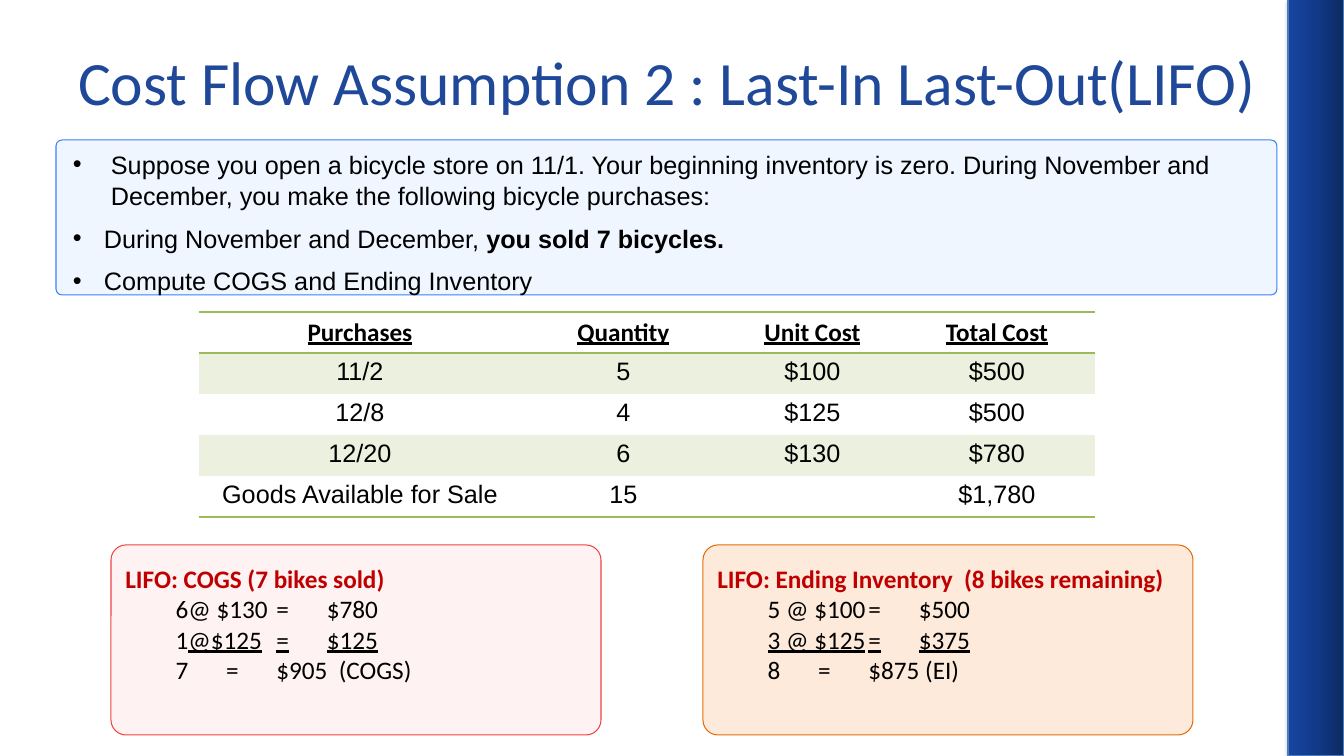
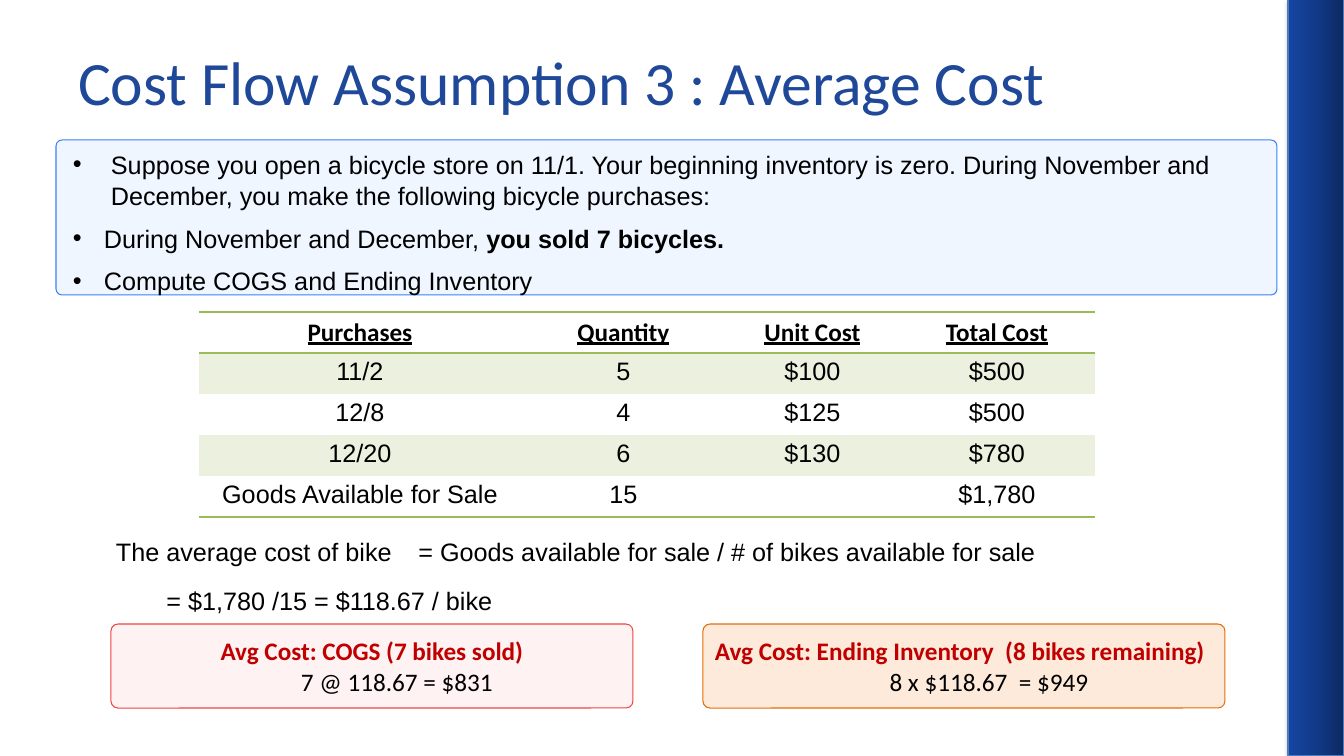
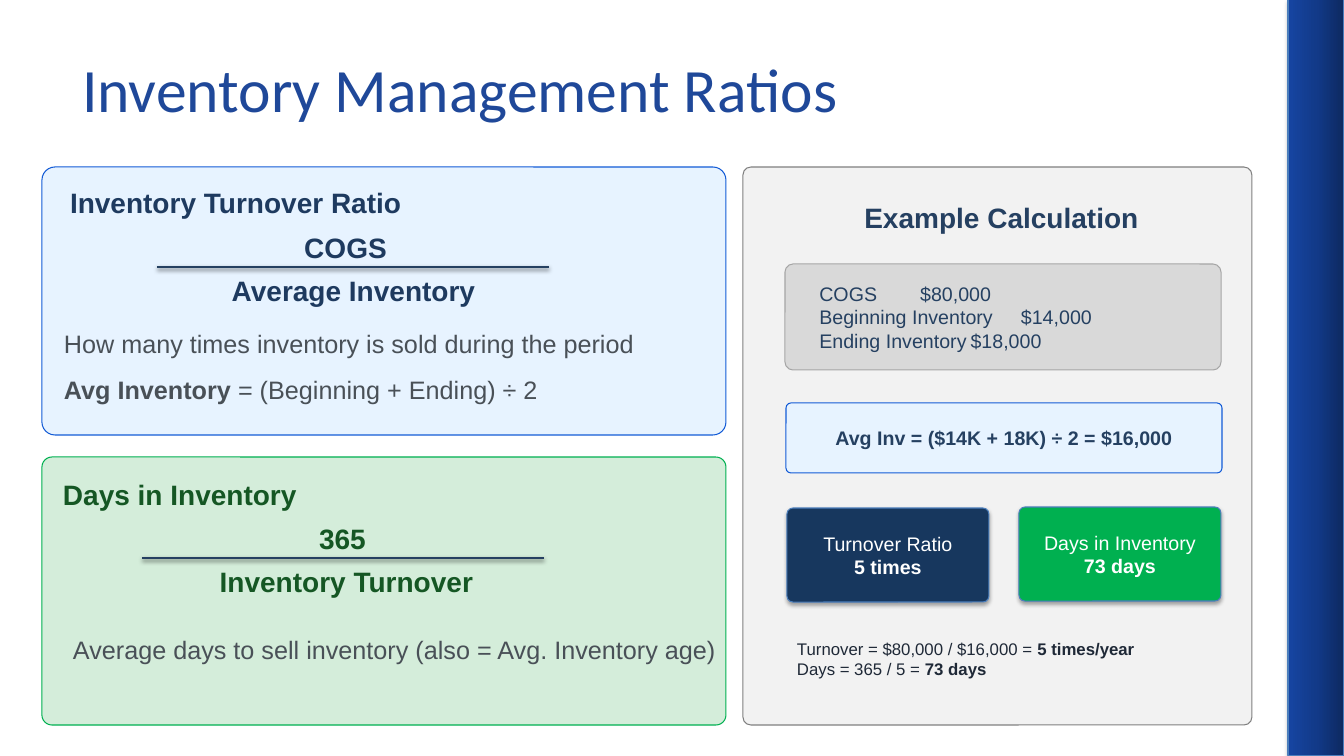
from lxml import etree
from pptx import Presentation
from pptx.dml.color import RGBColor
from pptx.enum.shapes import MSO_CONNECTOR, MSO_SHAPE
from pptx.enum.text import MSO_ANCHOR, MSO_AUTO_SIZE, PP_ALIGN
from pptx.oxml import parse_xml
from pptx.oxml.ns import nsdecls, qn
from pptx.util import Pt

ROUNDED = MSO_SHAPE.ROUNDED_RECTANGLE
RECTANGLE = MSO_SHAPE.RECTANGLE
STRAIGHT = MSO_CONNECTOR.STRAIGHT
LEFT, CENTER = PP_ALIGN.LEFT, PP_ALIGN.CENTER
TOP, MIDDLE = MSO_ANCHOR.TOP, MSO_ANCHOR.MIDDLE
FIXED = MSO_AUTO_SIZE.NONE

EMU_PER_PX = 914400 / 100.8
SLIDE_WIDTH, SLIDE_HEIGHT = 1344, 756
TITLE_ONLY = 5
NO_TABLE_STYLE = "{2D5ABB26-0587-4C30-8999-92F81FD0307C}"

BLACK, WHITE, RED = "000000", "FFFFFF", "C00000"
TITLE_BLUE, NAVY, SLATE = "1F4899", "1E3A5F", "254061"
GREEN_TEXT, GRAY_TEXT, NOTE_TEXT = "155724", "495057", "1F2937"
PALE_BLUE, BLUE_EDGE, GREEN = "E7F3FF", "135BD6", "00B050"
TABLE_GREEN, TABLE_BAND, THEME_EDGE = "9BBB59", "EBF1DE", "4B7EBC"
BAND_STOPS = ((0, "0D2960"), (50, "123A89"), (100, "1645A2"))

RESULT_CARDS = ((111, "FEF2F2", "EF4444"), (703, "FDEADA", "E46C0A"))
COLUMN_WIDTHS = (322, 205, 173, 196)
ROW_HEIGHT = 41
PURCHASES = (
    ("Purchases", "Quantity", "Unit Cost", "Total Cost"),
    ("11/2", "5", "$100", "$500"),
    ("12/8", "4", "$125", "$500"),
    ("12/20", "6", "$130", "$780"),
    ("Goods Available for Sale", "15", "", "$1,780"),
)


def px(length):
    """Turn pixels into EMU."""
    return round(length * EMU_PER_PX)


def rgb(colour):
    """Turn a hex string into a colour."""
    return RGBColor.from_string(colour)


def write(frame, text, *, size=18, font="Arial", colour=BLACK, bold=False,
          underline=False, align=LEFT, line=None, before=0, after=0,
          indent=0, bullet=False, tabs=()):
    """Add a paragraph; text is a string or (string, overrides) pairs."""
    first = frame.paragraphs[0]
    paragraph = frame.add_paragraph() if first.runs else first
    paragraph.alignment = align
    paragraph.line_spacing = line
    paragraph.space_before, paragraph.space_after = Pt(before), Pt(after)
    properties = paragraph._p.get_or_add_pPr()
    properties.set("marL", str(px(indent)))
    properties.set("indent", str(-px(indent) if bullet else 0))
    if bullet:
        etree.SubElement(properties, qn("a:buFont"), typeface="Arial")
        etree.SubElement(properties, qn("a:buChar"), char="•")
    if tabs:
        stops = etree.SubElement(properties, qn("a:tabLst"))
        for stop in tabs:
            etree.SubElement(stops, qn("a:tab"), pos=str(px(stop)), algn="l")
    for words, changes in [(text, {})] if isinstance(text, str) else text:
        run = paragraph.add_run()
        run.text = words
        run.font.name, run.font.size = font, Pt(size)
        run.font.color.rgb = rgb(colour)
        run.font.bold = changes.get("bold", bold)
        run.font.underline = changes.get("underline", underline)


def set_shadow(item, opacity=0, distance=1.8):
    """Give a shape or connector a soft shadow, or none."""
    effects = etree.SubElement(item.element.spPr, qn("a:effectLst"))
    if opacity:
        effects.append(parse_xml(
            f'<a:outerShdw {nsdecls("a")} blurRad="{Pt(3.1)}" dist="{Pt(distance)}" '
            f'dir="5400000" rotWithShape="0"><a:srgbClr val="000000">'
            f'<a:alpha val="{opacity * 1000}"/></a:srgbClr></a:outerShdw>'))


def add_card(slide, box, radius, fill, edge, anchor=MIDDLE, shadow=0):
    """Add a rounded card and return its text frame."""
    card = slide.shapes.add_shape(ROUNDED, *map(px, box))
    card.adjustments[0] = radius / min(box[2:])
    card.fill.solid()
    card.fill.fore_color.rgb = rgb(fill)
    card.line.color.rgb = rgb(edge)
    card.line.width = Pt(0.75)
    set_shadow(card, shadow)
    frame = card.text_frame
    frame.word_wrap = True
    frame.vertical_anchor = anchor
    return frame


def add_text(slide, box):
    """Add a wrapping text box without insets and return its frame."""
    frame = slide.shapes.add_textbox(*map(px, box)).text_frame
    frame.word_wrap = True
    frame.margin_left = frame.margin_right = 0
    frame.margin_top = frame.margin_bottom = 0
    return frame


def add_slide(deck, title, left=68, top=18):
    """Add a title-only slide with the shared title style."""
    slide = deck.slides.add_slide(deck.slide_layouts[TITLE_ONLY])
    heading = slide.shapes.title
    heading.left, heading.top = px(left), px(top)
    heading.width, heading.height = px(1210), px(126)
    frame = heading.text_frame
    frame.word_wrap = True
    frame.auto_size = FIXED
    frame.vertical_anchor = MIDDLE
    write(frame, title, size=44, font="Calibri", colour=TITLE_BLUE)
    return slide


def add_master_band(deck, slide):
    """Draw the blue side band and move it to the slide master."""
    band = slide.shapes.add_shape(
        RECTANGLE, px(1288), 0, px(SLIDE_WIDTH - 1288), px(SLIDE_HEIGHT))
    stops = "".join(
        f'<a:gs pos="{place * 1000}"><a:srgbClr val="{colour}"/></a:gs>'
        for place, colour in BAND_STOPS)
    band.element.spPr.insert(2, parse_xml(
        f'<a:gradFill {nsdecls("a")} rotWithShape="1"><a:gsLst>{stops}</a:gsLst>'
        f'<a:lin ang="10800000" scaled="0"/></a:gradFill>'))
    band.line.color.rgb = rgb(THEME_EDGE)
    band.line.width = Pt(0.75)
    set_shadow(band, 35)
    deck.slide_master.shapes.element.insert(2, band.element)


def add_cell_edges(cell, edges):
    """Draw green lines on the named edges of a cell."""
    properties = cell._tc.get_or_add_tcPr()
    for position, edge in enumerate(edges):
        properties.insert(position, parse_xml(
            f'<a:ln{edge} {nsdecls("a")} w="{Pt(1)}"><a:solidFill>'
            f'<a:srgbClr val="{TABLE_GREEN}"/></a:solidFill></a:ln{edge}>'))


def add_purchases_table(slide):
    """Add the table of bicycle purchases."""
    holder = slide.shapes.add_table(
        len(PURCHASES), len(COLUMN_WIDTHS), px(199), px(312),
        px(sum(COLUMN_WIDTHS)), px(ROW_HEIGHT * len(PURCHASES)))
    for style in holder.element.iter(qn("a:tableStyleId")):
        style.text = NO_TABLE_STYLE
    table = holder.table
    table.first_row = table.horz_banding = False
    for column, width in zip(table.columns, COLUMN_WIDTHS):
        column.width = px(width)
    edges = {0: "TB", len(PURCHASES) - 1: "B"}
    for row_index, values in enumerate(PURCHASES):
        table.rows[row_index].height = px(ROW_HEIGHT)
        is_header = row_index == 0
        for column_index, value in enumerate(values):
            cell = table.cell(row_index, column_index)
            if row_index % 2:
                cell.fill.solid()
                cell.fill.fore_color.rgb = rgb(TABLE_BAND)
            else:
                cell.fill.background()
            add_cell_edges(cell, edges.get(row_index, ""))
            if is_header:
                write(cell.text_frame, value, font="Calibri", bold=True,
                      underline=True, align=CENTER)
            elif value:
                cell.margin_left = cell.margin_right = px(7)
                cell.margin_top = cell.margin_bottom = 0
                write(cell.text_frame, value, align=CENTER, line=1.15)


def add_problem_slide(deck, title):
    """Add a slide with the bicycle store problem and its purchases."""
    slide = add_slide(deck, title)
    add_card(slide, (56, 140, 1221, 155), 6, "EFF6FF", "3B82F6")
    problem = add_text(slide, (73, 148, 1195, 143))
    bullets = (
        (38, "Suppose you open a bicycle store on 11/1. Your beginning inventory is zero. "
             "During November and December, you make the following bicycle purchases:"),
        (31, (("During November and December, ", {}),
              ("you sold 7 bicycles.", {"bold": True}))),
        (31, "Compute COGS and Ending Inventory"),
    )
    for indent, text in bullets:
        write(problem, text, line=Pt(22.4), after=8, indent=indent, bullet=True)
    add_purchases_table(slide)
    return slide


def add_lifo_slide(deck):
    """Add the LIFO slide."""
    slide = add_problem_slide(deck, "Cost Flow Assumption 2 : Last-In Last-Out(LIFO)")
    underlined = {"underline": True}
    results = (
        ("LIFO: COGS (7 bikes sold)",
         ("\t6@ $130\t=\t$780",
          (("\t1", {}), ("@$125\t=\t$125", underlined)),
          "\t7\t=\t$905  (COGS)")),
        ("LIFO: Ending Inventory  (8 bikes remaining)",
         ("\t5 @ $100\t=\t$500",
          (("\t", {}), ("3 @ $125\t=\t$375", underlined)),
          "\t8\t=\t$875 (EI)")),
    )
    for (left, fill, edge), (heading, steps) in zip(RESULT_CARDS, results):
        frame = add_card(slide, (left, 545, 490, 190), 15, fill, edge, anchor=TOP)
        frame.margin_top = px(14)
        write(frame, heading, font="Calibri", colour=RED, bold=True)
        for step in steps:
            write(frame, step, font="Calibri", tabs=(50, 151, 202))
    return slide


def add_average_slide(deck):
    """Add the average cost slide."""
    slide = add_problem_slide(deck, "Cost Flow Assumption 3 : Average Cost")
    results = (
        ("Avg Cost: COGS (7 bikes sold)", CENTER, "7 @ 118.67 = $831"),
        ("Avg Cost: Ending Inventory  (8 bikes remaining)", LEFT, "8 x $118.67  = $949"),
    )
    for (left, fill, edge), (heading, align, step) in zip(RESULT_CARDS, results):
        frame = add_card(slide, (left, 624, 522, 84), 7, fill, edge)
        write(frame, heading, font="Calibri", colour=RED, bold=True, align=align)
        write(frame, step, font="Calibri", align=CENTER, indent=50)
    average = add_text(slide, (116, 532, 1150, 82))
    for text in ("The average cost of bike\t= Goods available for sale / # of bikes available for sale",
                 "\t= $1,780 /15 = $118.67 / bike"):
        write(average, text, line=1.15, after=10, tabs=(302,))


def add_fraction(slide, box, numerator, denominator, colour, indent, rule):
    """Add a ratio with a shadowed rule given as left, right and height."""
    frame = add_text(slide, box)
    for text, shift in ((numerator, 0), (denominator, indent)):
        write(frame, text, size=20, colour=colour, bold=True, align=CENTER,
              line=Pt(22.4), after=8, indent=shift)
    start, end, height = map(px, rule)
    bar = slide.shapes.add_connector(STRAIGHT, start, height, end, height)
    bar.line.color.rgb = rgb(SLATE)
    bar.line.width = Pt(2)
    set_shadow(bar, 38, 1.6)


def add_ratio_heading(slide, box, text, colour):
    """Add the heading of a ratio card."""
    write(add_text(slide, box), text, size=20, colour=colour, bold=True, line=Pt(15.6))


def add_turnover_card(slide):
    """Add the inventory turnover definition."""
    add_card(slide, (42, 167, 684, 268), 13, PALE_BLUE, BLUE_EDGE)
    add_ratio_heading(slide, (70, 197, 395, 22), "Inventory Turnover Ratio", NAVY)
    add_fraction(slide, (64, 233, 563, 111), "COGS", "Average Inventory", NAVY, 16,
                 (157, 549, 267))
    meaning = add_text(slide, (64, 335, 636, 93))
    write(meaning, "How many times inventory is sold during the period",
          colour=GRAY_TEXT, line=Pt(16.5))
    write(meaning, (("Avg Inventory", {"bold": True}), (" = (Beginning + Ending) ÷ 2", {})),
          colour=GRAY_TEXT, line=Pt(16.5), before=16.5)


def add_days_card(slide):
    """Add the days in inventory definition."""
    add_card(slide, (42, 457, 684, 268), 10, "D4EDDA", GREEN)
    add_ratio_heading(slide, (63, 489, 290, 17), "Days in Inventory", GREEN_TEXT)
    add_fraction(slide, (53, 524, 579, 70), "365", "Inventory Turnover", GREEN_TEXT, 8,
                 (142, 544, 558))
    write(add_text(slide, (73, 641, 654, 18)),
          "Average days to sell inventory (also = Avg. Inventory age)",
          colour=GRAY_TEXT, line=Pt(16.5))


def add_example_panel(slide):
    """Add the worked example."""
    add_card(slide, (743, 167, 509, 558), 8, "F2F2F2", "808080")
    write(add_text(slide, (751, 201, 501, 35)), "Example Calculation",
          size=20, colour=SLATE, bold=True, align=CENTER)
    figures = add_card(slide, (785, 264, 436, 106), 8, "D9D9D9", "A6A6A6")
    figures.margin_left = px(32)
    for text in ("COGS\t$80,000", "Beginning Inventory\t$14,000", "Ending Inventory\t$18,000"):
        write(figures, text, size=14, colour=SLATE, tabs=(280,))
    average = add_card(slide, (786, 403, 436, 70), 5, PALE_BLUE, BLUE_EDGE)
    write(average, "Avg Inv = ($14K + 18K) ÷ 2 = $16,000",
          size=14, colour=SLATE, bold=True, align=CENTER)
    answers = (
        (787, 508, "17375E", "Turnover Ratio", "5 times"),
        (1019, 507, GREEN, "Days in Inventory", "73 days"),
    )
    for left, top, fill, label, value in answers:
        answer = add_card(slide, (left, top, 202, 94), 6, fill, THEME_EDGE, shadow=35)
        write(answer, label, size=14, colour=WHITE, align=CENTER)
        write(answer, value, size=14, colour=WHITE, bold=True, align=CENTER)
    workings = add_text(slide, (797, 639, 423, 40))
    for formula, result in (("Turnover = $80,000 / $16,000 = ", "5 times/year"),
                            ("Days = 365 / 5 = ", "73 days")):
        write(workings, ((formula, {}), (result, {"bold": True})), size=12, colour=NOTE_TEXT)


def add_ratios_slide(deck):
    """Add the inventory ratios slide."""
    slide = add_slide(deck, "Inventory Management Ratios", left=72, top=25)
    add_turnover_card(slide)
    add_days_card(slide)
    add_example_panel(slide)


def main():
    """Build and save the deck."""
    deck = Presentation()
    deck.slide_width, deck.slide_height = px(SLIDE_WIDTH), px(SLIDE_HEIGHT)
    lifo_slide = add_lifo_slide(deck)
    add_master_band(deck, lifo_slide)
    add_average_slide(deck)
    add_ratios_slide(deck)
    deck.save("out.pptx")


if __name__ == "__main__":
    main()
